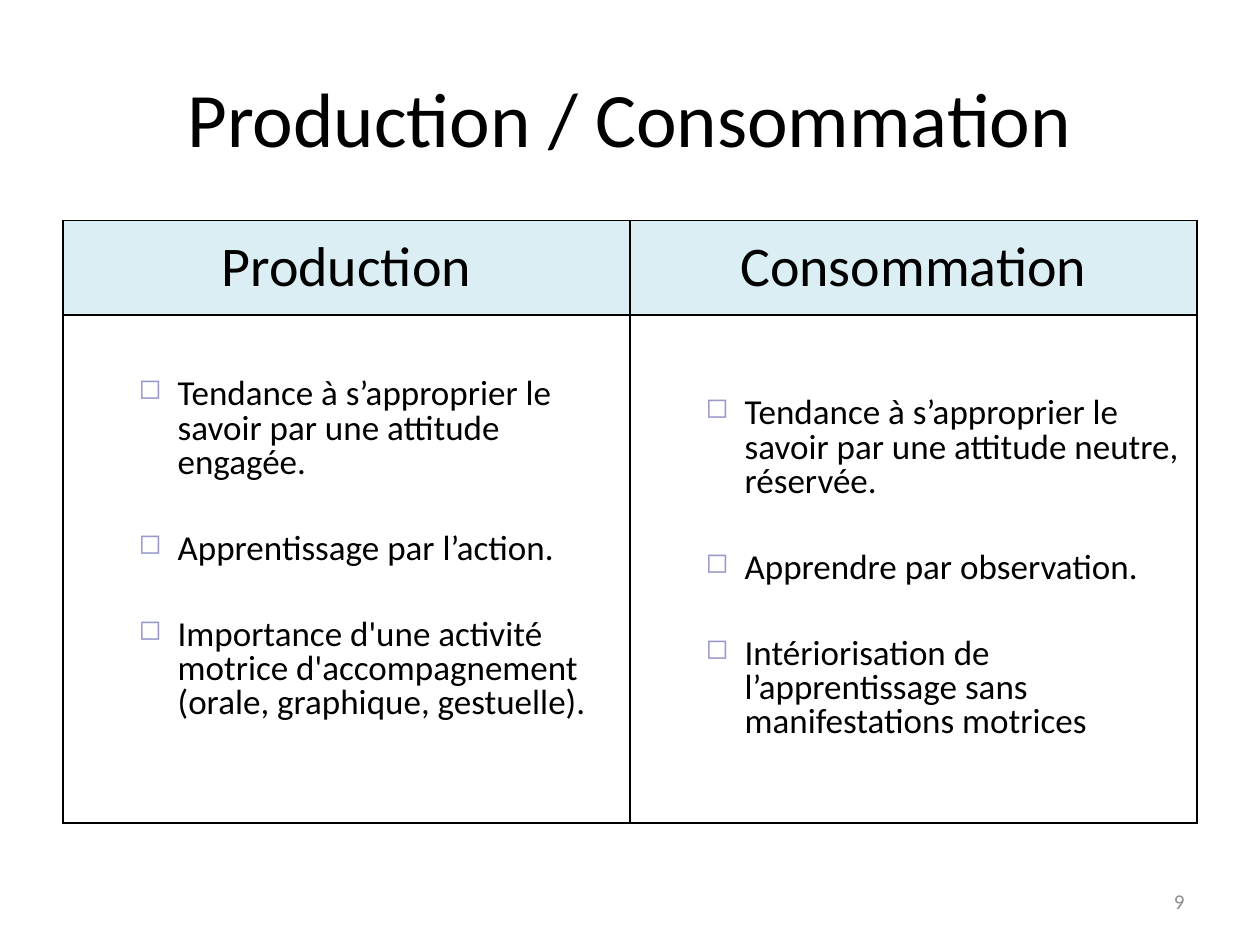
from pptx import Presentation
from pptx.dml.color import RGBColor
from pptx.enum.text import MSO_ANCHOR, PP_ALIGN
from pptx.oxml import parse_xml
from pptx.oxml.ns import nsdecls
from pptx.util import Inches, Pt

THEME = {
    "font": "Calibri",
    "text": "000000", "muted": "8C8C8C", "bullet": "9999CC",
    "header_fill": "DBEEF4", "body_fill": "FFFFFF", "border": "000000",
    "title_size": 44, "header_size": 32, "body_size": 20, "number_size": 12,
}

COLUMNS = {
    "Production": [
        "Tendance à s’approprier le savoir par une attitude engagée.",
        "Apprentissage par l’action.",
        "Importance d'une activité motrice d'accompagnement (orale, graphique, gestuelle).",
    ],
    "Consommation": [
        "Tendance à s’approprier le savoir par une attitude neutre, réservée.",
        "Apprendre par observation.",
        "Intériorisation de l’apprentissage sans manifestations motrices",
    ],
}


def write(paragraph, text, size, alignment, color="text"):
    paragraph.alignment = alignment
    run = paragraph.add_run()
    run.text = text
    formats = {"name": THEME["font"], "size": Pt(THEME[size]), "bold": False}
    for name, value in formats.items():
        setattr(run.font, name, value)
    run.font.color.rgb = RGBColor.from_string(THEME[color])


def format_cell(cell, fill):
    """Fill the cell, centre it vertically and draw its four borders."""
    cell.fill.solid()
    cell.fill.fore_color.rgb = RGBColor.from_string(THEME[fill])
    cell.vertical_anchor = MSO_ANCHOR.MIDDLE
    properties = cell._tc.get_or_add_tcPr()
    for position, side in enumerate(("lnL", "lnR", "lnT", "lnB")):
        properties.insert(position, parse_xml(
            f'<a:{side} {nsdecls("a")} w="{Pt(1)}"><a:solidFill>'
            f'<a:srgbClr val="{THEME["border"]}"/></a:solidFill></a:{side}>'))


presentation = Presentation()
presentation.slide_width = Inches(10)
presentation.slide_height = Inches(7.5)
slide = presentation.slides.add_slide(presentation.slide_layouts[5])

title = slide.shapes.title
placement = {"left": 0.5, "top": 0.3, "width": 9, "height": 1.25}
for name, value in placement.items():
    setattr(title, name, Inches(value))
title.text_frame.vertical_anchor = MSO_ANCHOR.MIDDLE
write(title.text_frame.paragraphs[0], "Production / Consommation",
      "title_size", PP_ALIGN.CENTER)

table = slide.shapes.add_table(
    2, len(COLUMNS), Inches(0.5), Inches(1.75), Inches(9), Inches(4.78)).table
table.first_row = False
table.horz_banding = False
for row, height in zip(table.rows, (0.75, 4.03)):
    row.height = Inches(height)

for column, (heading, points) in enumerate(COLUMNS.items()):
    header, body = table.cell(0, column), table.cell(1, column)
    format_cell(header, "header_fill")
    format_cell(body, "body_fill")
    write(header.text_frame.paragraphs[0], heading, "header_size", PP_ALIGN.CENTER)

    frame = body.text_frame
    for index, point in enumerate(points):
        paragraph = frame.add_paragraph() if index else frame.paragraphs[0]
        write(paragraph, point, "body_size", PP_ALIGN.LEFT)
        paragraph.level = 1
        paragraph.line_spacing = 0.8
        paragraph.space_before = Pt(29.5 if index else 5)
        properties = paragraph._p.get_or_add_pPr()
        properties.set("marL", str(Inches(0.81)))
        properties.set("indent", str(Inches(-0.31)))
        for bullet in (f'<a:buClr {nsdecls("a")}><a:srgbClr val="{THEME["bullet"]}"/></a:buClr>',
                       f'<a:buSzPct {nsdecls("a")} val="80000"/>',
                       f'<a:buChar {nsdecls("a")} char="◻"/>'):
            properties.append(parse_xml(bullet))

# The left list sits a little above the middle of its cell
table.cell(1, 0).margin_bottom = Inches(0.35)

number = slide.shapes.add_textbox(Inches(7.17), Inches(6.95), Inches(2.33), Inches(0.4))
number.text_frame.word_wrap = True
number.text_frame.vertical_anchor = MSO_ANCHOR.MIDDLE
write(number.text_frame.paragraphs[0], "9", "number_size", PP_ALIGN.RIGHT, "muted")

presentation.save("out.pptx")
